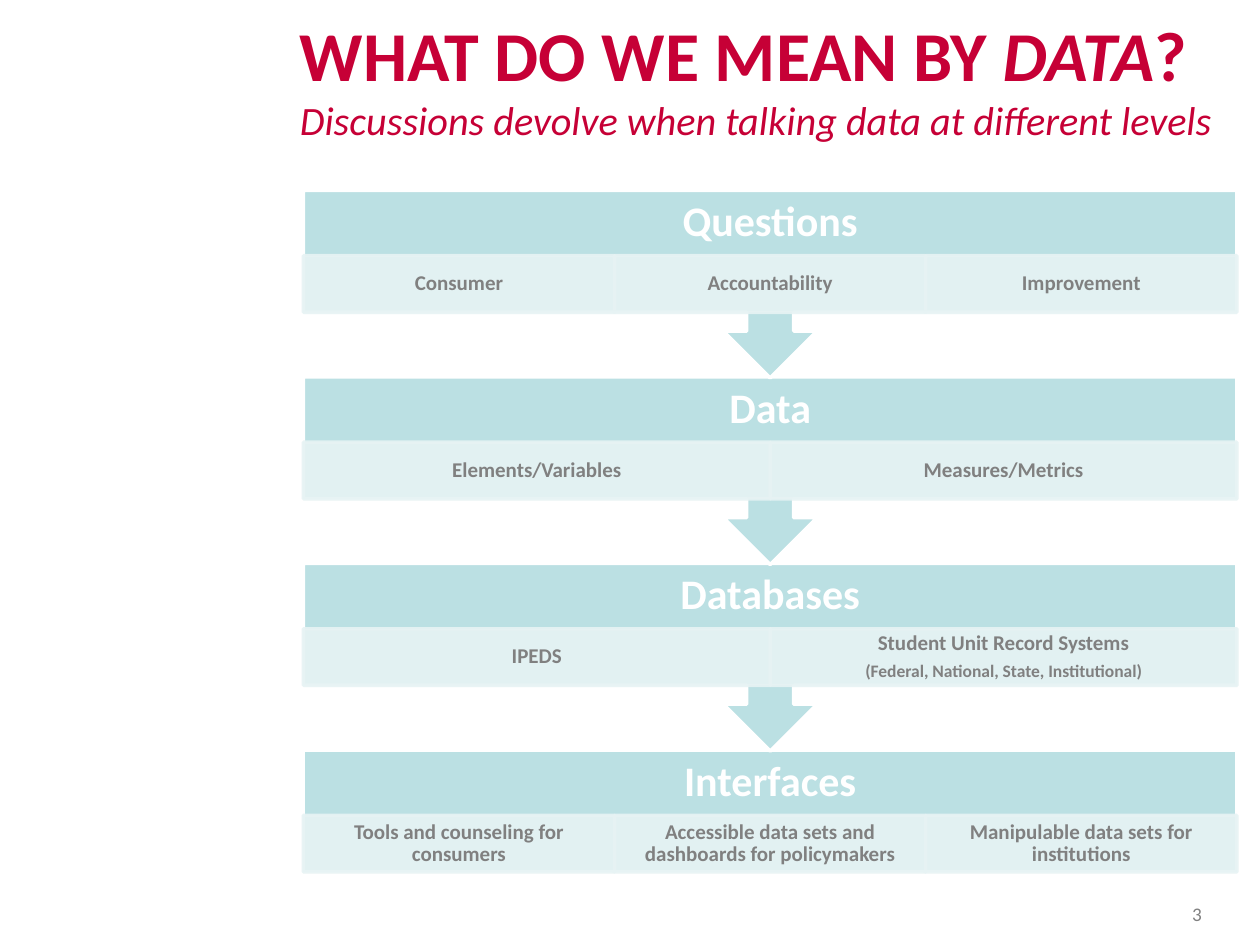
from lxml import etree
from pptx import Presentation
from pptx.dml.color import RGBColor
from pptx.enum import shapes, text
from pptx.oxml.ns import qn
from pptx.util import Pt

CRIMSON = RGBColor(0xC6, 0x00, 0x36)
TEAL = RGBColor(0xBB, 0xE0, 0xE3)
PALE = RGBColor(0xE7, 0xF3, 0xF4)
GREY = RGBColor(0x80, 0x80, 0x80)
WHITE = RGBColor(0xFF, 0xFF, 0xFF)

STAGES = [
    ("Questions", [["Consumer"], ["Accountability"], ["Improvement"]]),
    ("Data", [["Elements/Variables"], ["Measures/Metrics"]]),
    ("Databases", [["IPEDS"], ["Student Unit Record Systems",
                               "(Federal, National, State, Institutional)"]]),
    ("Interfaces", [["Tools and counseling for consumers"],
                    ["Accessible data sets and dashboards for policymakers"],
                    ["Manipulable data sets for institutions"]]),
]
STAGE_PITCH, CALLOUT_H, BODY_H, HEADING_H, CELL_H = 106.6, 107.3, 69.6, 37.4, 32.4


def style(paragraph, size, color, bold=False, italic=False):
    """Set the font of a whole paragraph."""
    font = paragraph.font
    font.name, font.size, font.color.rgb = "Calibri", Pt(size), color
    font.bold, font.italic = bold, italic


def add_box(slide, kind, box, fill, line):
    """Add a flat filled shape with a 2 pt outline."""
    shape = slide.shapes.add_shape(kind, *map(Pt, box))
    shape.shadow.inherit = False
    shape.fill.solid()
    shape.fill.fore_color.rgb = fill
    shape.line.color.rgb = line
    shape.line.width = Pt(2)
    return shape


def make_translucent(shape, percent):
    """Give the fill and outline of a shape the same opacity."""
    for color in shape._element.spPr.iter(qn("a:srgbClr")):
        etree.SubElement(color, qn("a:alpha")).set("val", str(percent * 1000))


def fill_text(frame, lines, sizes, color, bold=True, spacing=0.9, after=0.35):
    """Write centred lines in the middle of a text frame."""
    frame.word_wrap = True
    frame.vertical_anchor = text.MSO_ANCHOR.MIDDLE
    frame.margin_left = frame.margin_right = Pt(6.7)
    frame.margin_top = frame.margin_bottom = Pt(1.2)
    for i, (line, size) in enumerate(zip(lines, sizes)):
        paragraph = frame.add_paragraph() if i else frame.paragraphs[0]
        paragraph.text = line
        paragraph.alignment = text.PP_ALIGN.CENTER
        paragraph.line_spacing = spacing
        paragraph.space_after = Pt(size * after)
        style(paragraph, size, color, bold)


def add_title(slide, left, top, width, height):
    """Add the headline and its italic subtitle."""
    frame = slide.shapes.add_textbox(*map(Pt, (left, top, width, height))).text_frame
    frame.word_wrap = True
    headline, subtitle = frame.paragraphs[0], frame.add_paragraph()
    for words in ("WHAT DO WE MEAN BY ", "DATA", "?"):
        run = headline.add_run()
        run.text = words
        if words == "DATA":
            run.font.italic = True
    subtitle.text = "Discussions devolve when talking data at different levels"
    headline.alignment = subtitle.alignment = text.PP_ALIGN.JUSTIFY
    style(headline, 40, CRIMSON, bold=True)
    style(subtitle, 23, CRIMSON, italic=True)


def add_stage(slide, left, top, width, heading, cells, last):
    """Add one heading band, its row of cells and the arrow to the next stage."""
    if last:
        add_box(slide, shapes.MSO_SHAPE.RECTANGLE, (left, top, width, BODY_H), TEAL, WHITE)
    else:
        callout = add_box(slide, shapes.MSO_SHAPE.UP_ARROW_CALLOUT,
                          (left, top, width, CALLOUT_H), TEAL, WHITE)
        callout.rotation = 180
    band = slide.shapes.add_textbox(*map(Pt, (left, top, width, HEADING_H)))
    fill_text(band.text_frame, [heading], [24], WHITE)
    cell_w = width / len(cells)
    for i, lines in enumerate(cells):
        cell = add_box(slide, shapes.MSO_SHAPE.RECTANGLE,
                       (left + i * cell_w, top + HEADING_H, cell_w, CELL_H), PALE, PALE)
        make_translucent(cell, 90)
        fill_text(cell.text_frame, lines, (12, 10), GREY)


def add_flow(slide, left, top, width):
    """Stack the stages from the last up, so each arrow overlaps the next band."""
    for i, (heading, cells) in reversed(list(enumerate(STAGES))):
        add_stage(slide, left, top + i * STAGE_PITCH, width, heading, cells,
                  last=i == len(STAGES) - 1)


def add_page_number(slide, left, top, width, height):
    """Add the page number."""
    number = slide.shapes.add_textbox(*map(Pt, (left, top, width, height)))
    fill_text(number.text_frame, ["3"], [11], GREY, bold=False, spacing=1, after=0)


def main():
    """Build and save the slide."""
    deck = Presentation()
    deck.slide_width, deck.slide_height = Pt(720), Pt(540)
    slide = deck.slides.add_slide(deck.slide_layouts[6])
    add_title(slide, 164.2, 2.9, 555.8, 83.5)
    add_flow(slide, 173.4, 108.7, 533.4)
    add_page_number(slide, 648, 504, 72, 36)
    deck.save("out.pptx")


if __name__ == "__main__":
    main()
